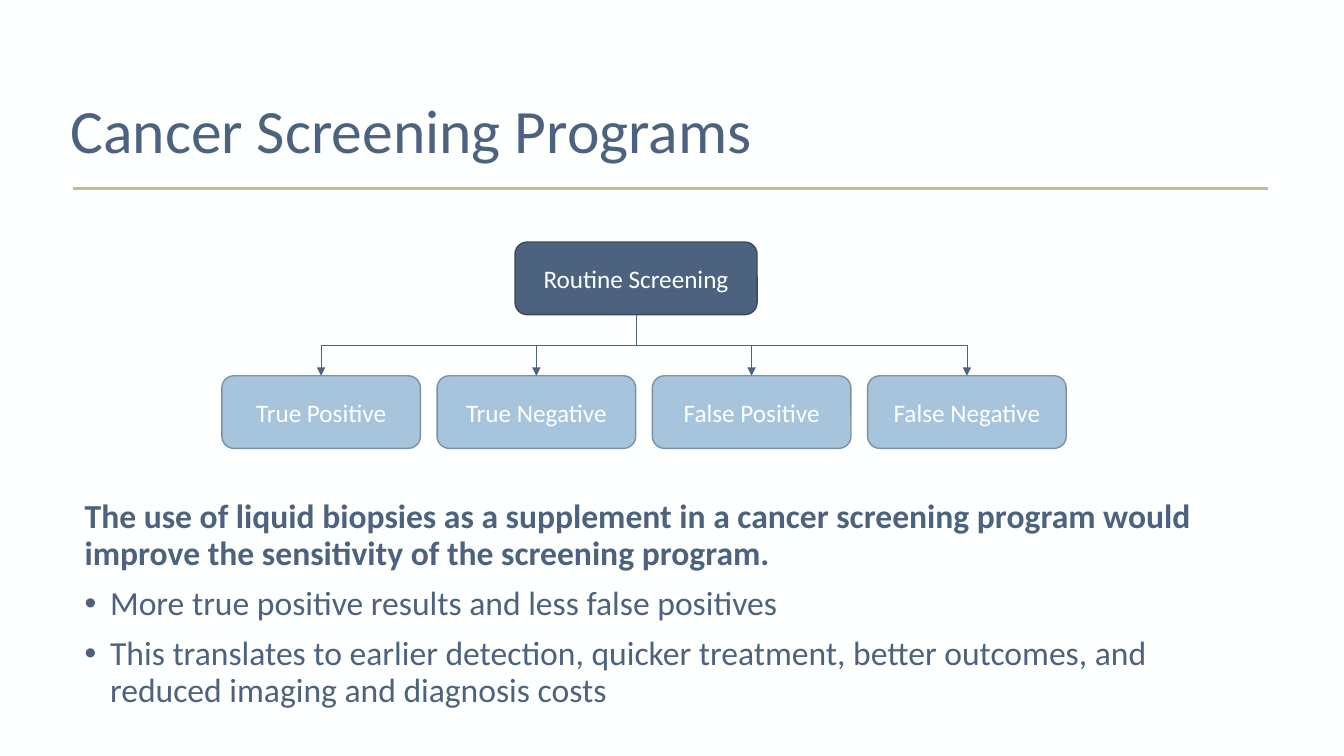
from pptx import Presentation
from pptx import util as u
from pptx.dml.color import RGBColor
from pptx.enum import shapes, text
from pptx.oxml.ns import qn
from lxml import etree

NAVY, SKY, GOLD, WHITE = "4C627F", "A7C4DD", "CCB78F", "FEFFFF"
BOTTOM, TOP = 2, 0


def colour(value):
    return RGBColor.from_string(value)


def style_font(paragraph, size, shade, bold=False):
    font = paragraph.font
    font.name = "Calibri"
    font.size = u.Pt(size)
    font.bold = bold
    font.color.rgb = colour(shade)


def place(shape, left, top, width, height):
    shape.left, shape.top = u.Cm(left), u.Cm(top)
    shape.width, shape.height = u.Cm(width), u.Cm(height)


def style_line(connector, shade, weight):
    connector.line.color.rgb = colour(shade)
    connector.line.width = u.Pt(weight)
    etree.SubElement(connector._element.spPr, qn("a:effectLst"))


def add_heading(slide, left, top, width, height):
    heading = slide.shapes.title
    place(heading, left, top, width, height)
    frame = heading.text_frame
    frame.text = "Cancer Screening Programs"
    frame.auto_size = text.MSO_AUTO_SIZE.NONE
    frame.vertical_anchor = text.MSO_ANCHOR.BOTTOM
    paragraph = frame.paragraphs[0]
    paragraph.alignment = text.PP_ALIGN.LEFT
    paragraph.line_spacing = 0.9
    style_font(paragraph, 44, NAVY)
    rule_y = u.Cm(top + height + 0.41)
    rule = slide.shapes.add_connector(
        shapes.MSO_CONNECTOR.STRAIGHT,
        u.Cm(left + 0.31), rule_y, u.Cm(left + 30.43), rule_y)
    style_line(rule, GOLD, 1.5)


def add_node(slide, label, left, top, width, height, fill, border):
    node = slide.shapes.add_shape(
        shapes.MSO_SHAPE.ROUNDED_RECTANGLE,
        u.Cm(left), u.Cm(top), u.Cm(width), u.Cm(height))
    node.shadow.inherit = False
    node.fill.solid()
    node.fill.fore_color.rgb = colour(fill)
    node.line.color.rgb = colour(border)
    node.line.width = u.Pt(1)
    node.text_frame.text = label
    node.text_frame.vertical_anchor = text.MSO_ANCHOR.MIDDLE
    paragraph = node.text_frame.paragraphs[0]
    paragraph.alignment = text.PP_ALIGN.CENTER
    style_font(paragraph, 18, WHITE)
    return node


def add_branch(slide, screening, outcome):
    start_x = screening.left + screening.width // 2
    start_y = screening.top + screening.height
    end_x = outcome.left + outcome.width // 2
    branch = slide.shapes.add_connector(
        shapes.MSO_CONNECTOR.ELBOW, start_x, start_y, end_x, outcome.top)
    branch.begin_connect(screening, BOTTOM)
    branch.end_connect(outcome, TOP)
    drop, span = outcome.top - start_y, abs(end_x - start_x)
    branch.left = (start_x + end_x - drop) // 2
    branch.top = (start_y + outcome.top - span) // 2
    branch.width, branch.height = drop, span
    goes_right = end_x > start_x
    frame = branch._element.spPr.xfrm
    frame.flipH, frame.flipV = goes_right, False
    frame.rot = 270 if goes_right else 90
    style_line(branch, NAVY, 0.5)
    line = branch._element.spPr.find(qn("a:ln"))
    etree.SubElement(line, qn("a:tailEnd"), type="triangle")


def add_outcome_tree(slide, left, top, width, height):
    node_height, gap = 1.83, 0.42
    labels = ["True Positive", "True Negative", "False Positive", "False Negative"]
    outcome_width = (width - gap * (len(labels) - 1)) / len(labels)
    screening = add_node(slide, "Routine Screening", left + 7.39, top,
                         6.1, node_height, NAVY, "38495E")
    for column, label in enumerate(labels):
        outcome = add_node(slide, label, left + column * (outcome_width + gap),
                           top + height - node_height, outcome_width, node_height,
                           SKY, "7C91A3")
        add_branch(slide, screening, outcome)


def set_bullet(paragraph, bulleted):
    properties = paragraph._p.get_or_add_pPr()
    indent = u.Cm(0.64) if bulleted else 0
    properties.set("marL", str(indent))
    properties.set("indent", str(-indent))
    if bulleted:
        etree.SubElement(properties, qn("a:buFont"), typeface="Arial")
        etree.SubElement(properties, qn("a:buChar"), char="•")
    else:
        etree.SubElement(properties, qn("a:buNone"))


def add_benefits(slide, left, top, width, height):
    benefits = slide.placeholders[1]
    place(benefits, left, top, width, height)
    frame = benefits.text_frame
    frame.text = "\n".join([
        "The use of liquid biopsies as a supplement in a cancer screening program "
        "would improve the sensitivity of the screening program.",
        "More true positive results and less false positives",
        "This translates to earlier detection, quicker treatment, better outcomes, "
        "and reduced imaging and diagnosis costs",
    ])
    frame.auto_size = text.MSO_AUTO_SIZE.NONE
    for index, paragraph in enumerate(frame.paragraphs):
        paragraph.line_spacing = 0.9
        paragraph.space_before = u.Pt(10)
        set_bullet(paragraph, bulleted=index > 0)
        style_font(paragraph, 24, NAVY, bold=index == 0)


def main():
    deck = Presentation()
    deck.slide_width, deck.slide_height = u.Cm(33.87), u.Cm(19.05)
    slide = deck.slides.add_slide(deck.slide_layouts[1])
    slide.background.fill.solid()
    slide.background.fill.fore_color.rgb = colour(WHITE)
    add_heading(slide, 1.52, 0.23, 28.98, 4.11)
    add_outcome_tree(slide, 5.59, 6.1, 21.28, 5.2)
    add_benefits(slide, 1.88, 12.47, 30.12, 6.38)
    deck.save("out.pptx")


if __name__ == "__main__":
    main()
